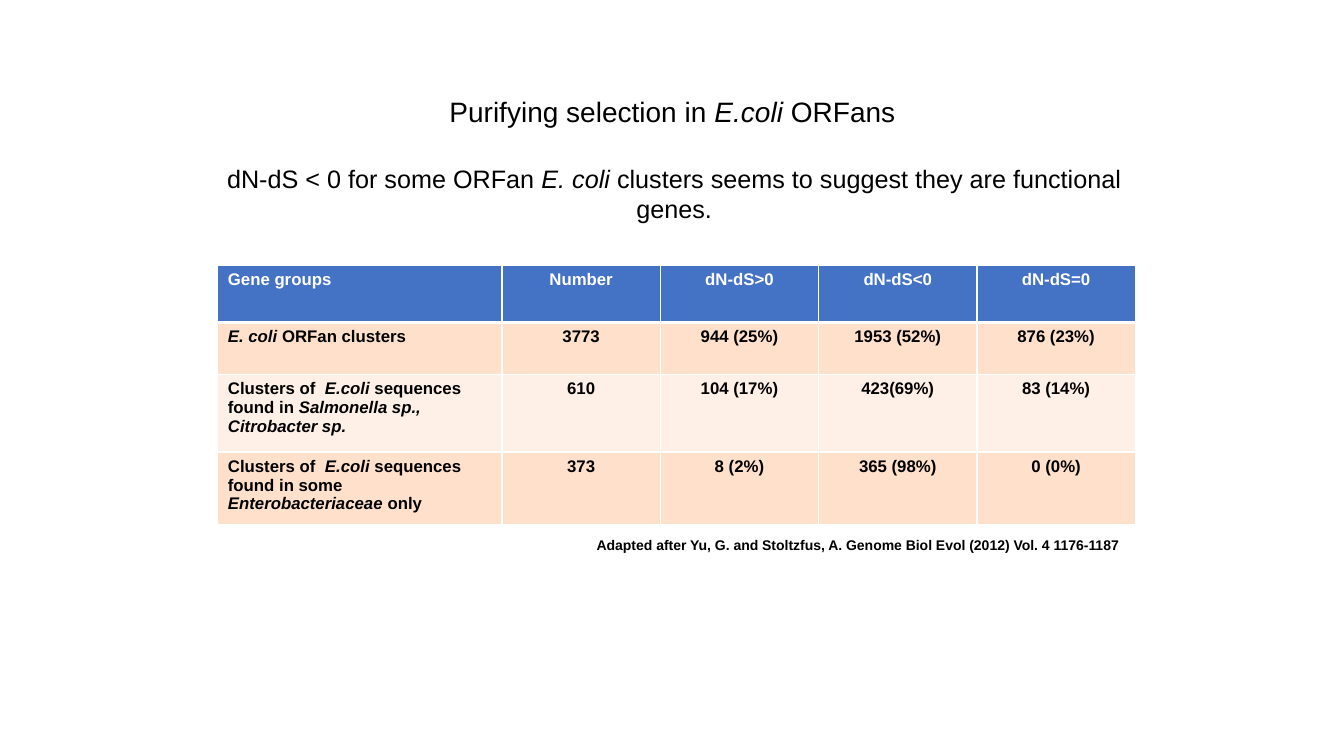
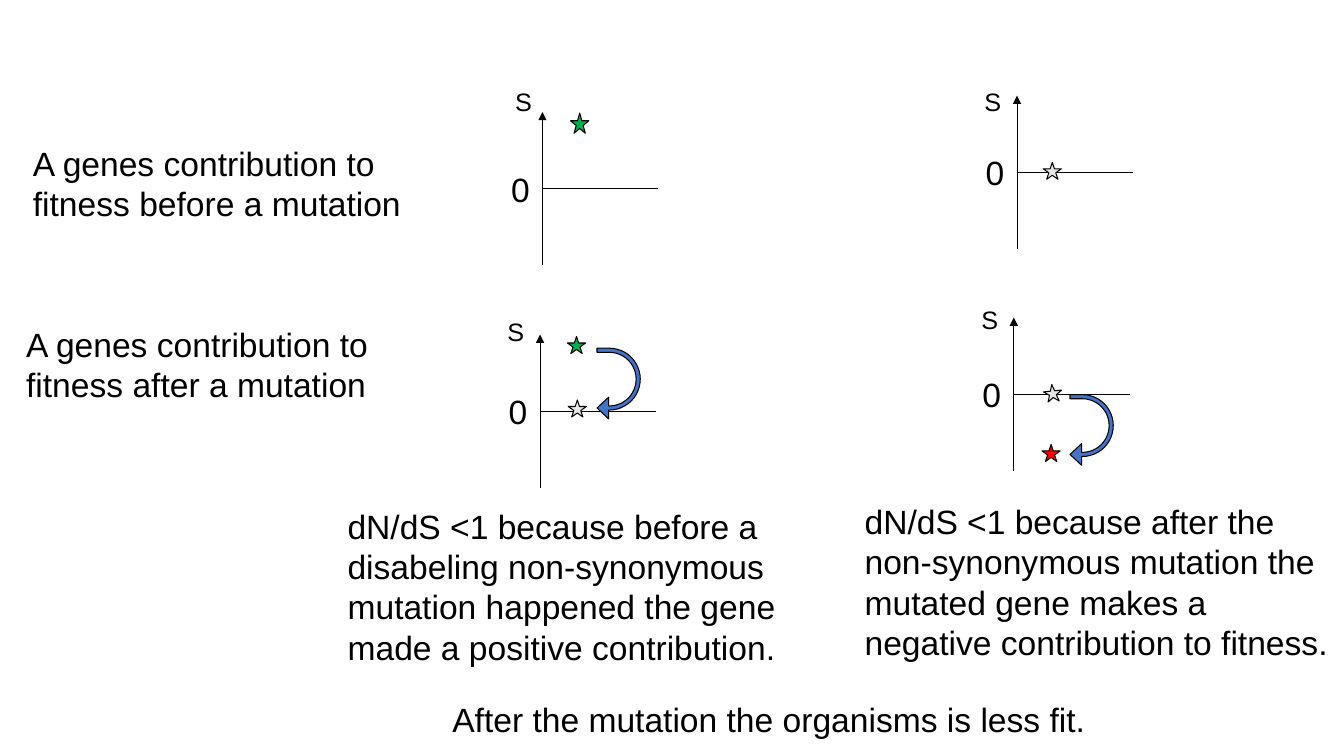
from dataclasses import dataclass

from lxml import etree
from pptx import Presentation
from pptx.dml.color import RGBColor
from pptx.enum.shapes import MSO_CONNECTOR, MSO_SHAPE
from pptx.enum.text import MSO_ANCHOR, MSO_AUTO_SIZE, PP_ALIGN
from pptx.oxml.ns import qn
from pptx.util import Cm, Pt

LEFT, CENTER, RIGHT = PP_ALIGN.LEFT, PP_ALIGN.CENTER, PP_ALIGN.RIGHT
TOP, MIDDLE = MSO_ANCHOR.TOP, MSO_ANCHOR.MIDDLE
GROW = MSO_AUTO_SIZE.SHAPE_TO_FIT_TEXT
STRAIGHT = MSO_CONNECTOR.STRAIGHT
STAR, UTURN = MSO_SHAPE.STAR_5_POINT, MSO_SHAPE.U_TURN_ARROW
TITLE_ONLY, BLANK = 5, 6


@dataclass(frozen=True)
class Theme:
    font: str = "Arial"
    ink: str = "000000"
    paper: str = "FFFFFF"
    blue: str = "4472C4"
    bands: tuple = ("FFE1CB", "FFF0E7")
    positive: str = "00B050"
    neutral: str = "E7E6E6"
    negative: str = "FF0000"
    title: int = 20
    lead: int = 18
    body: int = 24
    axis: int = 18
    cell: int = 12
    source: int = 10
    line: float = 0.75


THEME = Theme()


def rgb(color):
    return RGBColor.from_string(color)


def write(tf, text, size, align=LEFT, color=THEME.ink, bold=False):
    """Write one paragraph; parts between asterisks are italic."""
    p = tf.paragraphs[0]
    p.alignment = align
    f = p.font
    f.name, f.size, f.bold = THEME.font, Pt(size), bold
    f.color.rgb = rgb(color)
    for i, part in enumerate(text.split("*")):
        if part:
            r = p.add_run()
            r.text = part
            if i % 2:
                r.font.italic = True
    return p


def add_text(s, box, text, size, align=LEFT, bold=False, wrap=True, anchor=TOP):
    tf = s.shapes.add_textbox(*map(Cm, box)).text_frame
    tf.word_wrap = wrap
    tf.auto_size = GROW
    tf.vertical_anchor = anchor
    write(tf, text, size, align, bold=bold)


def add_title(s, box, text):
    sp = s.shapes.title
    sp.left, sp.top, sp.width, sp.height = map(Cm, box)
    sp.text_frame.vertical_anchor = MIDDLE
    write(sp.text_frame, text, THEME.title, CENTER).line_spacing = 0.9


def outline(line):
    line.color.rgb = rgb(THEME.ink)
    line.width = Pt(THEME.line)


def add_line(s, x1, y1, x2, y2, arrow=False):
    cx = s.shapes.add_connector(STRAIGHT, *map(Cm, (x1, y1, x2, y2)))
    outline(cx.line)
    spPr = cx._element.spPr
    if arrow:
        etree.SubElement(spPr.find(qn("a:ln")), qn("a:tailEnd"), type="triangle")
    etree.SubElement(spPr, qn("a:effectLst"))


def add_mark(s, kind, box, color, rotation=0):
    sp = s.shapes.add_shape(kind, *map(Cm, box))
    sp.shadow.inherit = False
    sp.fill.solid()
    sp.fill.fore_color.rgb = rgb(color)
    outline(sp.line)
    sp.rotation = rotation
    return sp


def set_borders(cell, top, bottom):
    tcPr = cell._tc.get_or_add_tcPr()
    sides = (("L", 1), ("R", 1), ("T", top), ("B", bottom))
    for i, (side, width) in enumerate(sides):
        ln = etree.Element(qn(f"a:ln{side}"), w=str(Pt(width)))
        fill = etree.SubElement(ln, qn("a:solidFill"))
        etree.SubElement(fill, qn("a:srgbClr"), val=THEME.paper)
        tcPr.insert(i, ln)


def add_gene_table(s, x, y, rows, widths, heights):
    box = map(Cm, (x, y, sum(widths), sum(heights)))
    table = s.shapes.add_table(len(rows), len(widths), *box).table
    for col, width in zip(table.columns, widths):
        col.width = Cm(width)
    for i, (row, height) in enumerate(zip(rows, heights)):
        table.rows[i].height = Cm(height)
        fill = THEME.bands[(i - 1) % 2] if i else THEME.blue
        color = THEME.ink if i else THEME.paper
        for j, text in enumerate(row):
            cell = table.cell(i, j)
            cell.fill.solid()
            cell.fill.fore_color.rgb = rgb(fill)
            set_borders(cell, 3 if i == 1 else 1, 1 if i else 3)
            write(cell.text_frame, text, THEME.cell, CENTER if j else LEFT, color, True)


def add_fitness_plot(s, x, y, label, stars, arrow=None):
    height, width = 3.86, 2.92
    zero = y + height / 2
    add_line(s, x, y + height, x, y, arrow=True)
    add_line(s, x, zero, x + width, zero)
    add_text(s, (x + label[0], y + label[1], 0.94, 1.02), "S", THEME.axis, wrap=False)
    add_text(s, (x - 1.04, zero - 0.63, 0.99, 1.27), "0", THEME.body, wrap=False)
    for dx, dy, h, color, rotation in stars:
        add_mark(s, STAR, (x + dx, y + dy, 0.46, h), color, rotation)
    if arrow:
        sp = add_mark(s, UTURN, (x + arrow[0], y + arrow[1], 1.78, 1.09), THEME.blue, 90)
        for i, value in enumerate((0.096, 0.25, 0.267, 0.733, 1)):
            sp.adjustments[i] = value


def selection_slide(prs):
    s = prs.slides.add_slide(prs.slide_layouts[TITLE_ONLY])
    add_title(s, (2.34, 1.02, 29.21, 3.68), "Purifying selection in *E.coli* ORFans")
    add_text(s, (4.67, 3.99, 24.64, 1.8),
             "dN-dS < 0 for some ORFan *E. coli* clusters seems to suggest they are functional genes.",
             THEME.lead, CENTER)
    rows = (
        ("Gene groups", "Number", "dN-dS>0", "dN-dS<0", "dN-dS=0"),
        ("*E. coli* ORFan clusters", "3773", "944 (25%)", "1953 (52%)", "876 (23%)"),
        ("Clusters of  *E.coli* sequences found in *Salmonella sp., Citrobacter sp.*",
         "610", "104 (17%)", "423(69%)", "83 (14%)"),
        ("Clusters of  *E.coli* sequences found in some *Enterobacteriaceae* only",
         "373", "8 (2%)", "365 (98%)", "0 (0%)"),
    )
    add_gene_table(s, 5.49, 6.68, rows, [7.16] + [3.99] * 4, (1.45, 1.3, 1.96, 1.83))
    add_text(s, (14.27, 13.39, 14.17, 0.69),
             "Adapted after Yu, G. and Stoltzfus, A. Genome Biol Evol (2012) Vol. 4 1176-1187",
             THEME.source, RIGHT, bold=True, anchor=MIDDLE)


def fitness_slide(prs):
    s = prs.slides.add_slide(prs.slide_layouts[BLANK])
    texts = (
        ((0.58, 3.48, 10.9, 3.33), "A genes contribution to fitness before a mutation"),
        ((0.41, 8.03, 9.22, 3.33), "A genes contribution to fitness after a mutation"),
        ((8.51, 12.62, 11.71, 5.38),
         "dN/dS <1 because before a disabeling non-synonymous mutation happened "
         "the gene made a positive contribution."),
        ((21.54, 12.5, 12.32, 5.38),
         "dN/dS <1 because after the non-synonymous mutation the mutated gene "
         "makes a negative contribution to fitness."),
    )
    for box, text in texts:
        add_text(s, box, text, THEME.body)
    add_text(s, (11.15, 17.48, 16.61, 1.27),
             "After the mutation the organisms is less fit.", THEME.body, wrap=False)

    good, none, bad = THEME.positive, THEME.neutral, THEME.negative
    add_fitness_plot(s, 13.67, 2.82, (-0.94, -0.76), [(0.71, 0.03, 0.51, good, 0)])
    add_fitness_plot(s, 13.61, 8.43, (-1.07, -0.58),
                     [(0.69, 0.05, 0.43, good, 0), (0.71, 1.65, 0.43, none, 0)],
                     (1.09, 0.69))
    add_fitness_plot(s, 25.63, 2.41, (-1.07, -0.36), [(0.66, 1.68, 0.43, none, 0)])
    add_fitness_plot(s, 25.55, 8, (-1.07, -0.46),
                     [(0.74, 1.73, 0.43, none, 210), (0.71, 3.2, 0.43, bad, 0)],
                     (1.07, 2.29))


def main():
    prs = Presentation()
    prs.slide_width, prs.slide_height = Cm(33.87), Cm(19.05)
    selection_slide(prs)
    fitness_slide(prs)
    prs.save("out.pptx")


if __name__ == "__main__":
    main()
